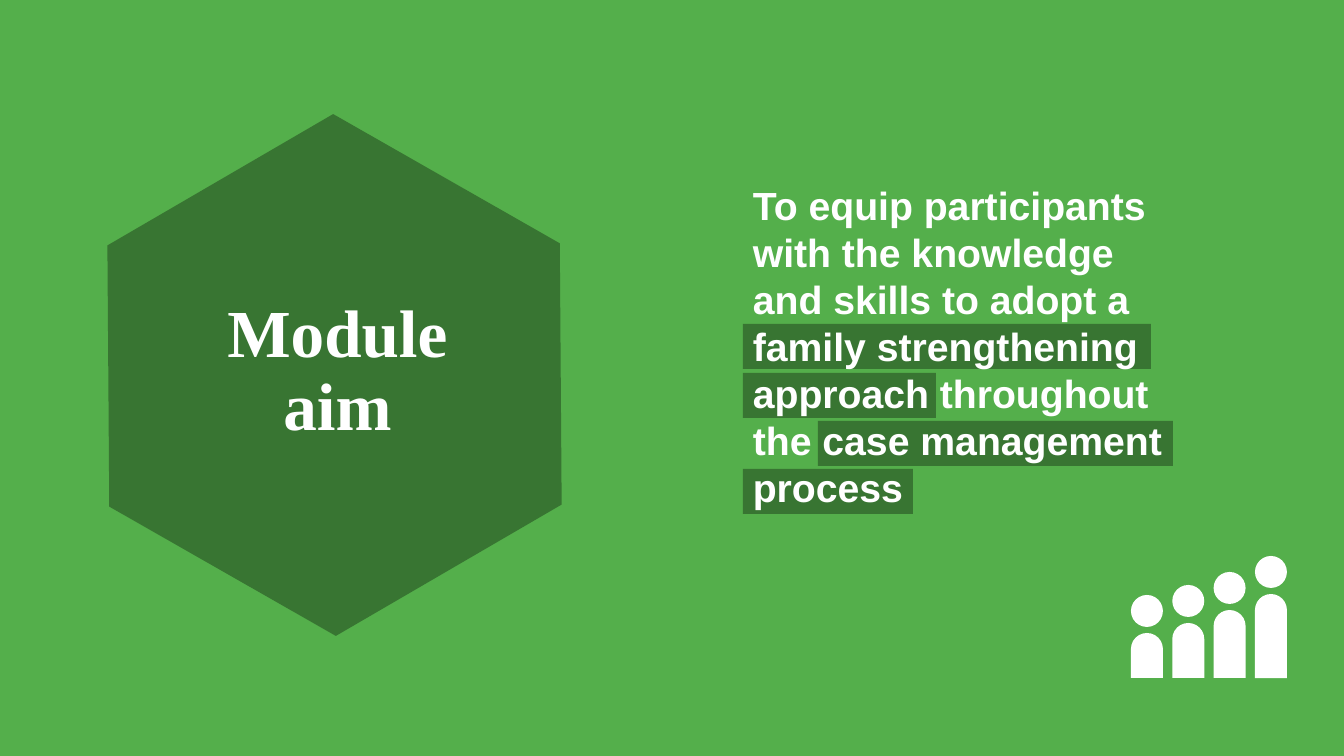
from pptx import Presentation
from pptx.dml.color import RGBColor
from pptx.enum.shapes import MSO_SHAPE
from pptx.enum.text import MSO_ANCHOR, PP_ALIGN
from pptx.util import Pt

HEXAGON, RECTANGLE = MSO_SHAPE.HEXAGON, MSO_SHAPE.RECTANGLE
OVAL, BODY = MSO_SHAPE.OVAL, MSO_SHAPE.ROUND_2_SAME_RECTANGLE
MIDDLE, TOP = MSO_ANCHOR.MIDDLE, MSO_ANCHOR.TOP
CENTER, LEFT = PP_ALIGN.CENTER, PP_ALIGN.LEFT

COLORS = {"green": "54AF4B", "dark": "387532", "white": "FFFFFF"}
WIDTH, HEIGHT = 1344, 756
SCALE = 12192000 / WIDTH

HEXAGON_BOX = (73, 149, 523, 452)
HIGHLIGHTS = [(743, 324, 408), (743, 373, 193), (818, 421, 355), (743, 469, 170)]
HIGHLIGHT_HEIGHT = 45
TEXTS = [
    ("Module aim", (183, 342, 309, 61), MIDDLE,
     {"alignment": CENTER, "line_spacing": 0.9},
     {"name": "Times New Roman", "size": Pt(48), "bold": True}),
    ("To equip participants with the knowledge and skills to adopt a family "
     "strengthening approach throughout the case management process",
     (743, 176, 446, 343), TOP,
     {"alignment": LEFT, "line_spacing": 1.0},
     {"name": "Arial", "size": Pt(28), "bold": True}),
]
HEAD_TOPS = [595, 585, 572, 556]
PEOPLE_LEFT, PEOPLE_STEP, PEOPLE_BOTTOM = 1131, 41.33, 678
HEAD_SIZE, BODY_DROP = 32, 38


def emu(lengths):
    return [round(length * SCALE) for length in lengths]


def color(name):
    return RGBColor.from_string(COLORS[name])


def add_shape(shapes, kind, bounds, fill):
    shape = shapes.add_shape(kind, *emu(bounds))
    shape.shadow.inherit = False
    shape.fill.solid()
    shape.fill.fore_color.rgb = color(fill)
    shape.line.fill.background()
    return shape


def set_values(target, values):
    for name, value in values.items():
        setattr(target, name, value)


def add_text(page, text, bounds, anchor, para_format, font_format):
    frame = page.shapes.add_textbox(*emu(bounds)).text_frame
    set_values(frame, {"word_wrap": True, "vertical_anchor": anchor})
    para = frame.paragraphs[0]
    set_values(para, para_format)
    span = para.add_run()
    span.text = text
    set_values(span.font, font_format)
    span.font.color.rgb = color("white")


def add_people(page):
    group = page.shapes.add_group_shape()
    for index, head_top in enumerate(HEAD_TOPS):
        left = PEOPLE_LEFT + index * PEOPLE_STEP
        top = head_top + BODY_DROP
        body = add_shape(group.shapes, BODY,
                         (left, top, HEAD_SIZE, PEOPLE_BOTTOM - top), "white")
        body.adjustments[0] = 0.5
        body.adjustments[1] = 0
        add_shape(group.shapes, OVAL, (left, head_top, HEAD_SIZE, HEAD_SIZE), "white")


def main():
    deck = Presentation()
    deck.slide_width, deck.slide_height = emu((WIDTH, HEIGHT))
    page = deck.slides.add_slide(deck.slide_layouts[6])
    page.background.fill.solid()
    page.background.fill.fore_color.rgb = color("green")

    hexagon = add_shape(page.shapes, HEXAGON, HEXAGON_BOX, "dark")
    hexagon.rotation = 29.7
    hexagon.adjustments[0] = 0.29
    for left, top, width in HIGHLIGHTS:
        add_shape(page.shapes, RECTANGLE, (left, top, width, HIGHLIGHT_HEIGHT), "dark")
    for item in TEXTS:
        add_text(page, *item)
    add_people(page)
    deck.save("out.pptx")


if __name__ == "__main__":
    main()
